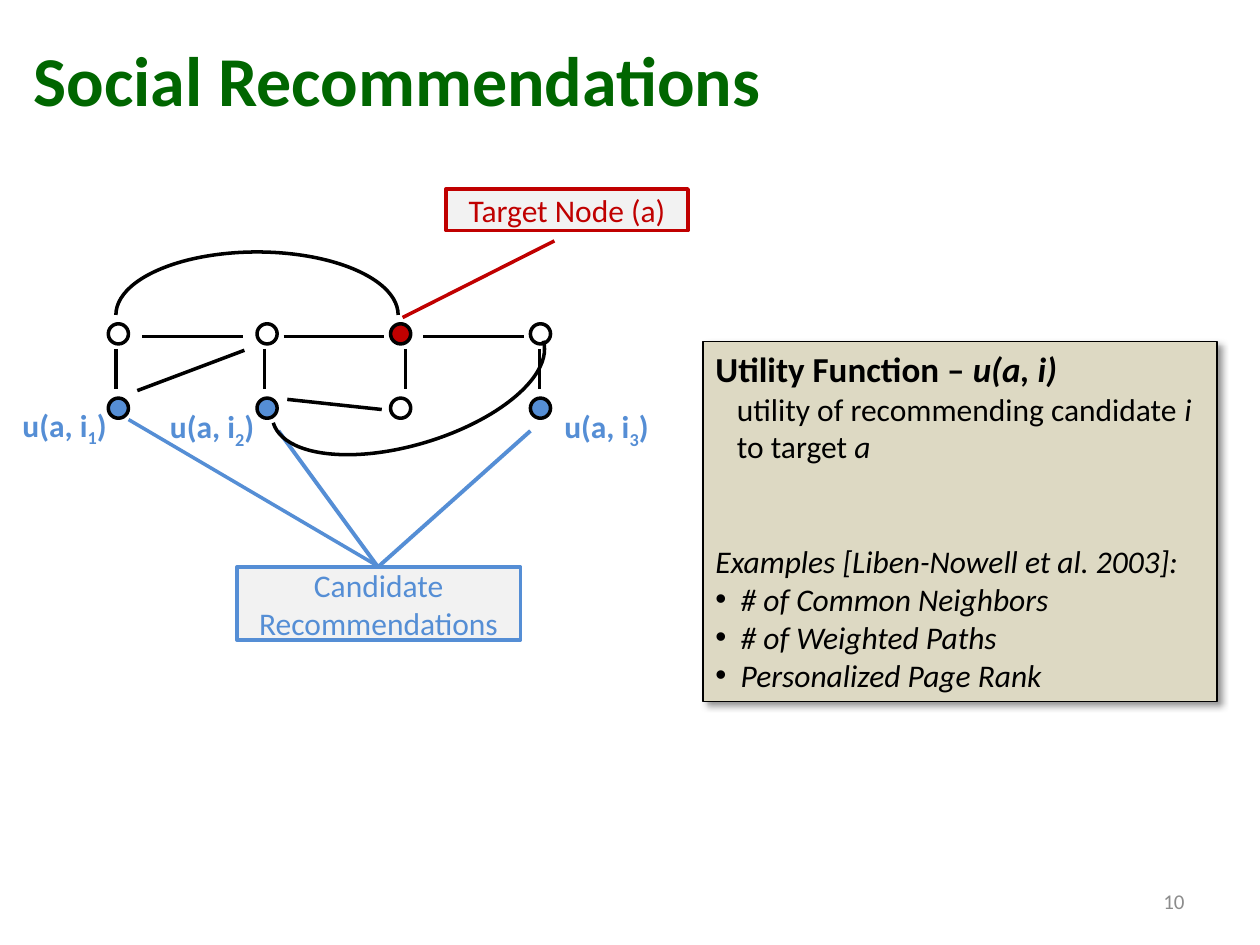
from lxml import etree
from pptx import Presentation, util as u
from pptx.dml.color import RGBColor
from pptx.enum import shapes, text
from pptx.oxml import ns

WIDTH, HEIGHT = 10, 7.5
COLORS = {"title": "006600", "number": "8C8C8C", "ink": "000000", "target": "C00000",
          "candidate": "558ED5", "callout": "F2F2F2", "panel": "DDD9C3"}

# Graph: node centres lie on a grid of columns and rows
COLUMNS, ROWS, DIAMETER = (0.94, 2.12, 3.18, 4.29), (2.65, 3.24), 0.16
NODE_FILLS = {(0, 1): "candidate", (1, 1): "candidate", (3, 1): "candidate", (2, 0): "target"}
VERTICAL_EDGES = (0.92, 2.1, 3.22, 4.28)
VERTICAL_SPAN = (2.77, 3.09)
HORIZONTAL_EDGES, HORIZONTAL_LENGTH = (1.13, 2.25, 3.36), 0.8
HORIZONTAL_Y = 2.67
SLANTED_EDGES = [(1.09, 3.1, 1.94, 2.78), (2.28, 3.17, 3.03, 3.25)]
ARC_SIZE = (2.24, 1)
ARCS = [((2.04, 2.5), 0), ((3.24, 3.03), 163.1)]  # centre, rotation

CALLOUTS = [
    ("Target Node (a)", "target", (3.54, 1.5, 1.92, 0.33), (1.25, 0.448, 3.094, -0.18)),
    ("Candidate Recommendations", "candidate", (1.88, 4.5, 2.25, 0.58),
     (0, 0.503, -2.018, -0.382)),
]
CANDIDATE_HUB, CANDIDATE_ENDS = (3, 4.5), [(2.21, 3.42), (4.21, 3.42)]
UTILITY_LABELS = [("1", 0.08, 3.17), ("2", 1.25, 3.18), ("3", 4.38, 3.18)]

ITALIC = {"italic": True}
PANEL_BOX = (5.58, 2.71, 4.08, 2.86)
PANEL_TEXT = [  # runs, paragraph format
    ([("Utility Function – ", {"bold": True, "size": 20}),
      ("u(a, i)", {"bold": True, "italic": True, "size": 20})], {}),
    ([("utility of recommending candidate ", {}), ("i\v", ITALIC),
      ("to target ", {}), ("a", ITALIC)], {"indent": 0.17}),
    ([("Examples [Liben-Nowell et al. 2003]:", ITALIC)], {"before": 44}),
] + [([(item, ITALIC)], {"indent": 0.2, "bullet": "•"})
     for item in ("# of Common Neighbors", "# of Weighted Paths", "Personalized Page Rank")]

presentation = Presentation()
presentation.slide_width, presentation.slide_height = u.Inches(WIDTH), u.Inches(HEIGHT)
slide = presentation.slides.add_slide(presentation.slide_layouts[6])


def inches(values):
    return [u.Inches(value) for value in values]


def rgb(name):
    return RGBColor.from_string(COLORS[name])


def write(shape, paragraphs, size=18, color="ink", bold=False, align="LEFT",
          anchor="TOP", wrap=True):
    """Fill a shape with (runs, paragraph format) pairs, or with one plain string."""
    if isinstance(paragraphs, str):
        paragraphs = [([(paragraphs, {})], {})]
    frame = shape.text_frame
    frame.word_wrap = wrap
    frame.vertical_anchor = getattr(text.MSO_ANCHOR, anchor)
    for index, (runs, layout) in enumerate(paragraphs):
        paragraph = frame.add_paragraph() if index else frame.paragraphs[0]
        paragraph.alignment = getattr(text.PP_ALIGN, align)
        paragraph.space_before = u.Pt(layout.get("before", 0))
        properties = paragraph._p.get_or_add_pPr()
        indent = u.Inches(layout.get("indent", 0))
        properties.set("marL", str(indent))
        if "bullet" in layout:
            properties.set("indent", str(-indent))
            etree.SubElement(properties, ns.qn("a:buFont"), typeface="Arial")
            etree.SubElement(properties, ns.qn("a:buChar"), char=layout["bullet"])
        for content, style in runs:
            if content.endswith("\v"):
                content, line_break = content[:-1], True
            else:
                line_break = False
            run = paragraph.add_run()
            run.text = content
            run.font.name = "Calibri"
            run.font.size = u.Pt(style.get("size", size))
            run.font.bold = style.get("bold", bold)
            run.font.italic = style.get("italic", False)
            run.font.color.rgb = rgb(color)
            if "baseline" in style:
                run._r.get_or_add_rPr().set("baseline", str(style["baseline"]))
            if line_break:
                paragraph.add_line_break()


def add_text(box, content, **style):
    write(slide.shapes.add_textbox(*inches(box)), content, **style)


def add_shape(kind, box, fill=None, line="ink", width=2):
    shape = slide.shapes.add_shape(getattr(shapes.MSO_SHAPE, kind), *inches(box))
    shape.shadow.inherit = False
    if fill:
        shape.fill.solid()
        shape.fill.fore_color.rgb = rgb(fill)
    else:
        shape.fill.background()
    shape.line.color.rgb = rgb(line)
    shape.line.width = u.Pt(width)
    return shape


def add_line(x1, y1, x2, y2, color="ink", width=2):
    line = slide.shapes.add_connector(shapes.MSO_CONNECTOR.STRAIGHT, *inches((x1, y1, x2, y2)))
    line.line.color.rgb = rgb(color)
    line.line.width = u.Pt(width)
    etree.SubElement(line._element.spPr, ns.qn("a:effectLst"))


def add_arc(center, rotation):
    """Draw the upper half of an ellipse, turned about its centre."""
    corner = [middle - size / 2 for middle, size in zip(center, ARC_SIZE)]
    arc = add_shape("ARC", (*corner, *ARC_SIZE))
    arc.adjustments[0], arc.adjustments[1] = 108, 0  # 180 degrees to 0
    arc.rotation = rotation


def add_drop_shadow(shape):
    effects = shape._element.spPr.find(ns.qn("a:effectLst"))
    shadow = etree.SubElement(effects, ns.qn("a:outerShdw"), blurRad=str(u.Pt(4)),
                              dist=str(u.Pt(3)), dir="2700000", algn="tl", rotWithShape="0")
    color = etree.SubElement(shadow, ns.qn("a:srgbClr"), val=COLORS["ink"])
    etree.SubElement(color, ns.qn("a:alpha"), val="40000")


add_text((0.17, 0, 9.58, 1.25), "Social Recommendations",
         size=40, color="title", bold=True, anchor="MIDDLE")
add_text((7.17, 6.95, 2.33, 0.4), "10", size=12, color="number", align="RIGHT", anchor="MIDDLE")

for x in VERTICAL_EDGES:
    add_line(x, VERTICAL_SPAN[0], x, VERTICAL_SPAN[1])
for x in HORIZONTAL_EDGES:
    add_line(x, HORIZONTAL_Y, x + HORIZONTAL_LENGTH, HORIZONTAL_Y)
for edge in SLANTED_EDGES:
    add_line(*edge)
for column, x in enumerate(COLUMNS):
    for row, y in enumerate(ROWS):
        add_shape("OVAL", (x - DIAMETER / 2, y - DIAMETER / 2, DIAMETER, DIAMETER),
                  fill=NODE_FILLS.get((column, row)))

for label, color, box, pointer in CALLOUTS:
    callout = add_shape("LINE_CALLOUT_1", box, fill="callout", line=color)
    for index, value in enumerate(pointer):
        callout.adjustments[index] = value
    write(callout, label, color=color, align="CENTER", anchor="MIDDLE")
for end in CANDIDATE_ENDS:
    add_line(*CANDIDATE_HUB, *end, color="candidate", width=2.25)
for number, x, y in UTILITY_LABELS:
    runs = [("u(a, i", {}), (number, {"baseline": -25000}), (")", {})]
    add_text((x, y, 0.89, 0.4), [(runs, {})], color="candidate", bold=True, wrap=False)

panel = add_shape("RECTANGLE", PANEL_BOX, fill="panel", width=0.75)
add_drop_shadow(panel)
write(panel, PANEL_TEXT)
for center, rotation in ARCS:
    add_arc(center, rotation)

presentation.save("out.pptx")
